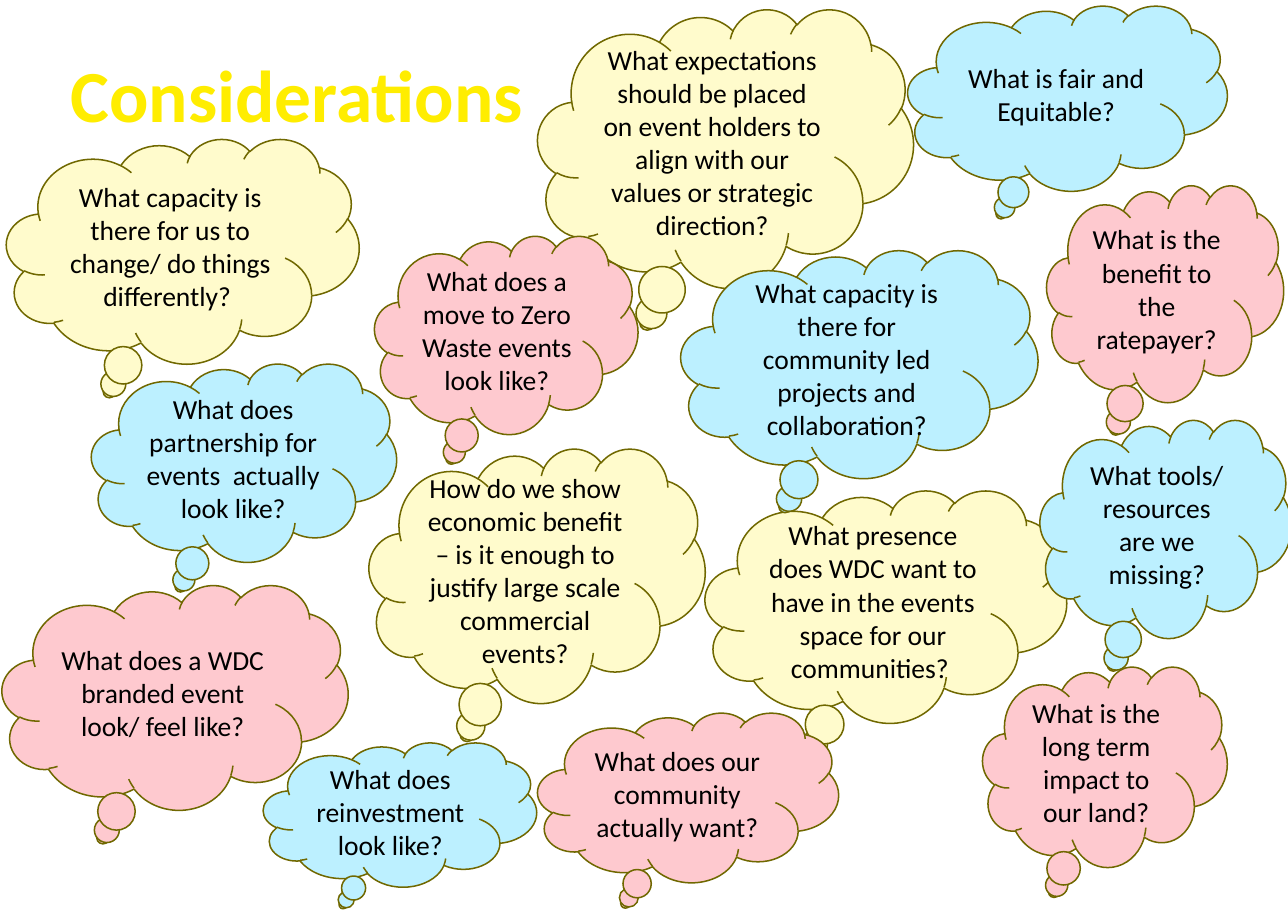
from dataclasses import dataclass
from typing import NamedTuple

from pptx import Presentation
from pptx.dml.color import RGBColor as Color
from pptx.enum.shapes import MSO_SHAPE as Preset
from pptx.enum.text import MSO_ANCHOR as Anchor, PP_ALIGN as Align
from pptx.util import Pt


@dataclass(frozen=True)
class Theme:
    """Colours and type sizes of the slide."""
    font: str = "Calibri"
    title: str = "FFED00"
    ink: str = "000000"
    outline: str = "706800"
    blue: str = "BCF0FF"
    pink: str = "FEC9CF"
    cream: str = "FFFBCC"
    title_size: int = 48
    text_size: int = 18
    line_width: int = 1


class Box(NamedTuple):
    """A rectangle in points."""
    left: float
    top: float
    width: float
    height: float


THEME = Theme()
PAGE = Box(0, 0, 841.68, 595.44)
TITLE = Box(46.1, 22.3, 720.7, 68.4)
QUESTIONS = [
    (Box(593.3, 3.6, 208.8, 121), THEME.blue, "What is fair and\nEquitable?"),
    (Box(684, 121, 154.8, 141.8), THEME.pink,
     "What is the benefit to the ratepayer?"),
    (Box(351.4, 5.8, 245.5, 182.2), THEME.cream,
     "What expectations should be placed on event holders to align with "
     "our values or strategic direction?"),
    (Box(244.8, 154.1, 172.1, 129.6), THEME.pink,
     "What does a move to Zero Waste events look like?"),
    (Box(642.2, 435.6, 159.8, 131), THEME.pink,
     "What is the long term impact to our land?"),
    (Box(460.8, 320.4, 236.2, 151.9), THEME.cream,
     "What presence does WDC want to have in the events space for our "
     "communities? "),
    (Box(4.3, 90.7, 230.4, 146.9), THEME.cream,
     "What capacity is there for us to change/ do things differently? "),
    (Box(445, 163.4, 233.3, 149), THEME.blue,
     "What capacity is there for community led projects and collaboration?"),
    (Box(59.8, 237.6, 199.4, 129.6), THEME.blue,
     "What does partnership for events  actually look like?"),
    (Box(241.2, 293, 219.6, 166.3), THEME.cream,
     "How do we show economic benefit – is it enough to justify large scale "
     "commercial events?"),
    (Box(351.4, 465.8, 196.6, 110.9), THEME.pink,
     "What does our community actually want?"),
    (Box(1.4, 382.3, 226.1, 146.9), THEME.pink,
     "What does a WDC branded event look/ feel like?"),
    (Box(172.1, 485.3, 178.6, 94.3), THEME.blue,
     "What does reinvestment look like?"),
    (Box(679.7, 274.3, 164.2, 142.6), THEME.blue,
     "What tools/ resources are we missing?"),
]


def add_span(para, text, size, colour, bold=False):
    """Add one styled run to a paragraph."""
    span = para.add_run()
    span.text = text
    span.font.name = THEME.font
    span.font.size = Pt(size)
    span.font.bold = bold
    span.font.color.rgb = Color.from_string(colour)


def add_title(page, box, text):
    """Place the heading at the bottom of its box."""
    frame = page.shapes.add_textbox(*map(Pt, box)).text_frame
    frame.word_wrap = True
    frame.vertical_anchor = Anchor.BOTTOM
    frame.margin_left = frame.margin_right = Pt(0)
    frame.margin_top = frame.margin_bottom = Pt(0)
    para = frame.paragraphs[0]
    para.line_spacing = 0.9
    add_span(para, text, THEME.title_size, THEME.title, bold=True)


def add_thought(page, box, fill, question):
    """Place a thought cloud holding one question."""
    cloud = page.shapes.add_shape(Preset.CLOUD_CALLOUT, *map(Pt, box))
    cloud.shadow.inherit = False
    cloud.fill.solid()
    cloud.fill.fore_color.rgb = Color.from_string(fill)
    cloud.line.color.rgb = Color.from_string(THEME.outline)
    cloud.line.width = Pt(THEME.line_width)
    frame = cloud.text_frame
    frame.word_wrap = True
    frame.vertical_anchor = Anchor.MIDDLE
    for index, line in enumerate(question.split("\n")):
        para = frame.add_paragraph() if index else frame.paragraphs[0]
        para.alignment = Align.CENTER
        add_span(para, line, THEME.text_size, THEME.ink)


def main():
    """Build the slide and save the deck."""
    deck = Presentation()
    deck.slide_width, deck.slide_height = Pt(PAGE.width), Pt(PAGE.height)
    page = deck.slides.add_slide(deck.slide_layouts[6])
    add_title(page, TITLE, "Considerations")
    for box, fill, question in QUESTIONS:
        add_thought(page, box, fill, question)
    deck.save("out.pptx")


if __name__ == "__main__":
    main()
